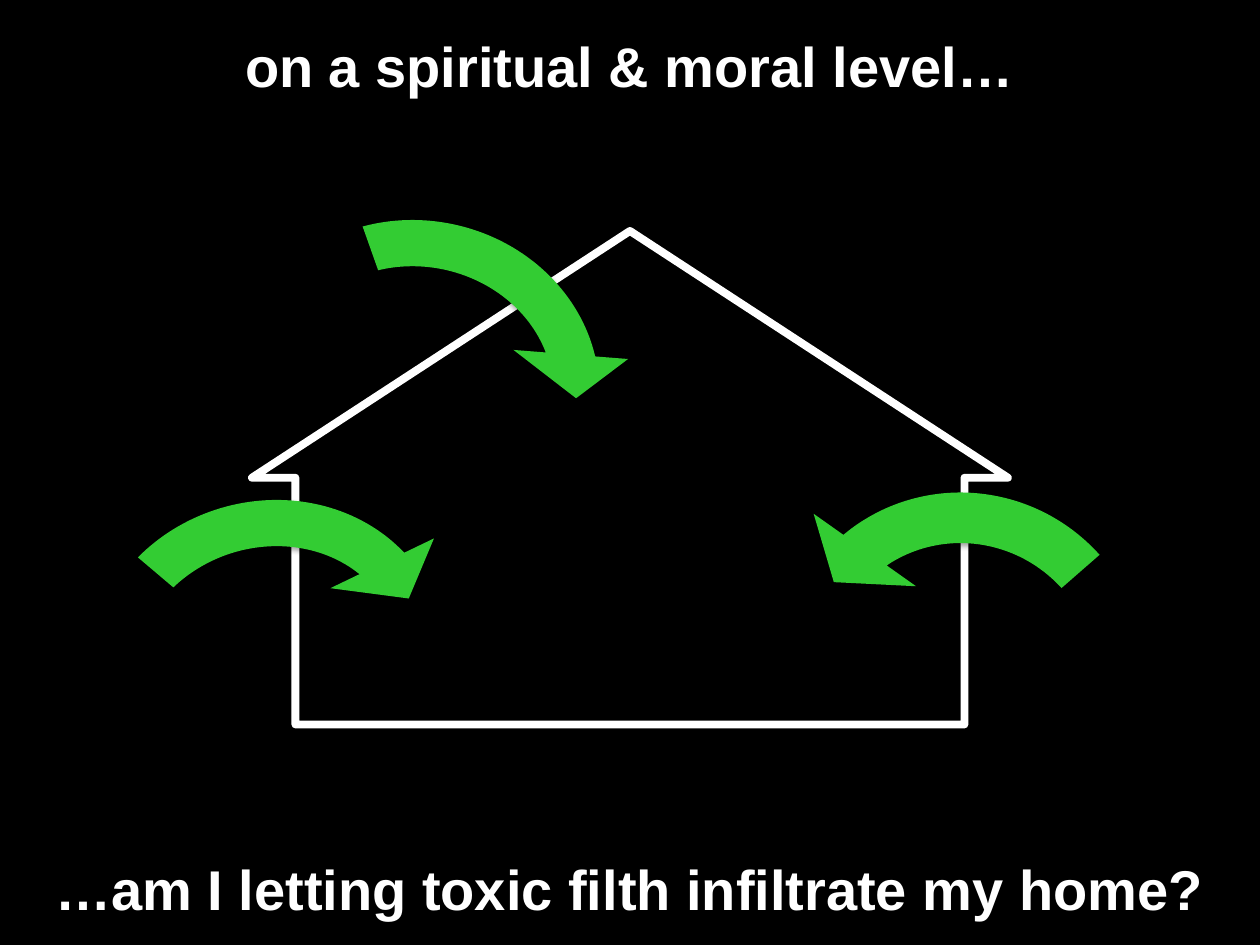
import lxml.etree
import pptx
import pptx.dml.color
import pptx.enum.shapes
import pptx.enum.text
import pptx.oxml
import pptx.oxml.ns
import pptx.util

Pt = pptx.util.Pt
RGBColor = pptx.dml.color.RGBColor
Shape = pptx.enum.shapes.MSO_SHAPE

BLACK = RGBColor(0x00, 0x00, 0x00)
WHITE = RGBColor(0xFF, 0xFF, 0xFF)
GREEN = RGBColor(0x33, 0xCC, 0x33)

SHADOW = (
    f"<a:effectLst {pptx.oxml.ns.nsdecls('a')}>"
    f'<a:outerShdw blurRad="{Pt(3.1)}" dist="{Pt(1.8)}" dir="5400000" rotWithShape="0">'
    f'<a:srgbClr val="{BLACK}"><a:alpha val="35000"/></a:srgbClr>'
    "</a:outerShdw></a:effectLst>"
)


class HousePage:
    """Hold the style and the current slide, and draw its elements."""

    font = "Arial"
    text_size = Pt(32)
    outline = Pt(4.5)

    def __init__(self, deck):
        self.page = deck.slides.add_slide(deck.slide_layouts[6])

    def shape(self, kind, bounds, fill=None, line=None):
        shape = self.page.shapes.add_shape(kind, *(Pt(length) for length in bounds))
        shape.shadow.inherit = False
        if fill is None:
            shape.fill.background()
        else:
            shape.fill.solid()
            shape.fill.fore_color.rgb = fill
        if line is None:
            shape.line.fill.background()
        else:
            shape.line.color.rgb = line
            shape.line.width = self.outline
        return shape

    def backdrop(self, bounds, lines, gap):
        box = self.shape(Shape.RECTANGLE, bounds, fill=BLACK)
        frame = box.text_frame
        frame.word_wrap = True
        frame.vertical_anchor = pptx.enum.text.MSO_ANCHOR.MIDDLE
        frame.margin_top, frame.margin_bottom = Pt(5), Pt(0)
        for index, text in enumerate(lines):
            para = frame.add_paragraph() if index else frame.paragraphs[0]
            para.alignment = pptx.enum.text.PP_ALIGN.CENTER
            para.space_before = Pt(gap if index else 0)
            span = para.add_run()
            span.text = text
            span.font.name = self.font
            span.font.size = self.text_size
            span.font.bold = True
            span.font.color.rgb = WHITE

    def house(self, bounds):
        house = self.shape(Shape.UP_ARROW, bounds, line=WHITE)
        house.adjustments[0] = 0.885
        house.adjustments[1] = 0.5

    def arrow(self, bounds, rotation, start=143.22, flipped=False):
        arrow = self.shape(Shape.CIRCULAR_ARROW, bounds, fill=GREEN)
        arrow.rotation = rotation
        for index, value in enumerate((0.116, 9.73, 201.91, start, 0.144)):
            arrow.adjustments[index] = value
        properties = arrow._element.spPr
        if flipped:
            properties.xfrm.set("flipH", "1")
        effects = properties.find(pptx.oxml.ns.qn("a:effectLst"))
        properties.replace(effects, lxml.etree.fromstring(SHADOW))


def main():
    deck = pptx.Presentation()
    deck.slide_width, deck.slide_height = Pt(720), Pt(540)
    page = HousePage(deck)
    page.backdrop(
        (0, 0, 720, 540),
        ("on a spiritual & moral level…", "…am I letting toxic filth infiltrate my home?"),
        gap=432,
    )
    page.house((144, 132, 432, 282))
    page.arrow((29.5, 267, 246, 228), 341.6)
    page.arrow((116.5, 106.5, 246, 228), 11.8)
    page.arrow((424, 260.5, 253, 249), 28, start=149.46, flipped=True)
    deck.save("out.pptx")


if __name__ == "__main__":
    main()
